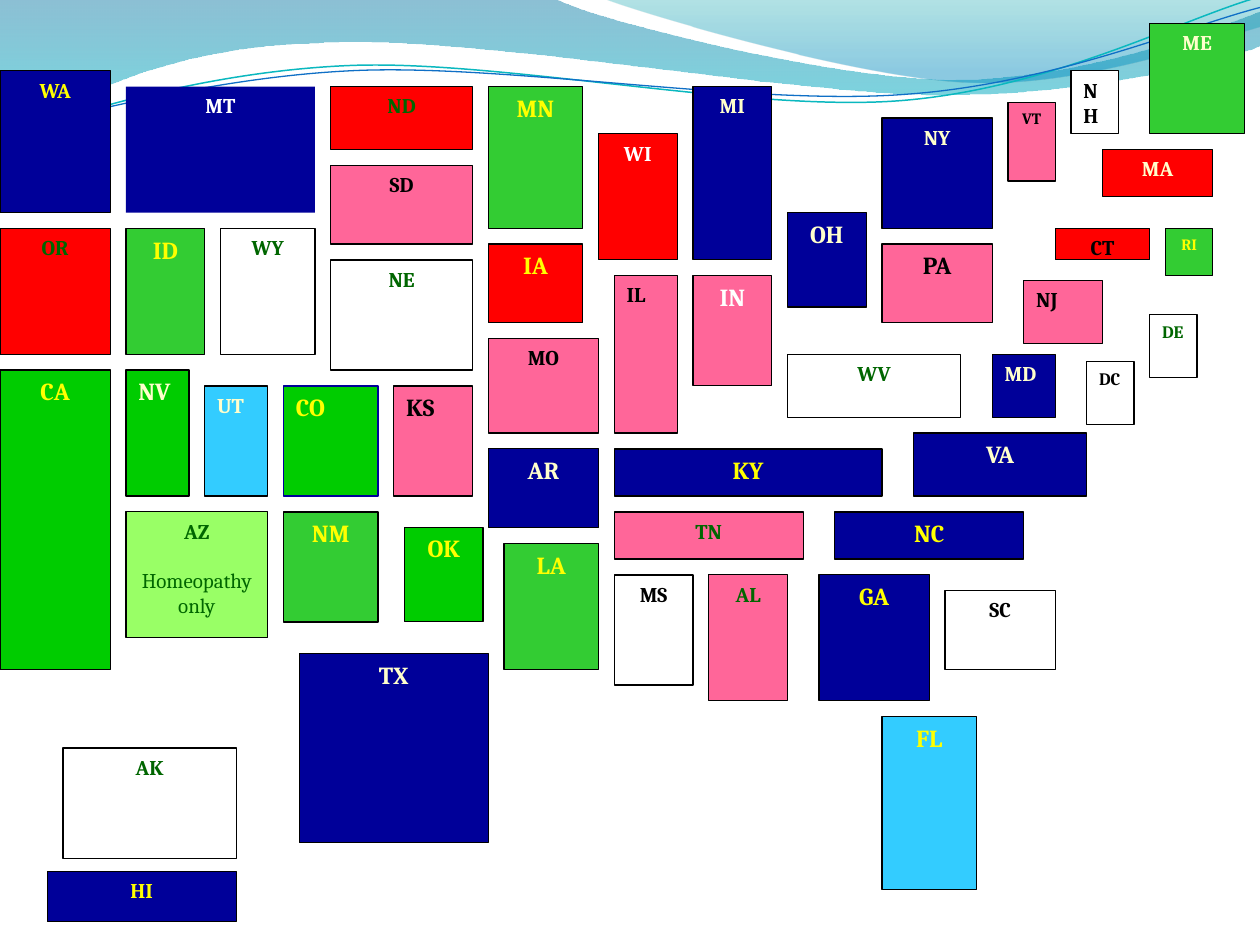
import math
from dataclasses import dataclass, field

import pptx
import pptx.dml.color
import pptx.enum.shapes
import pptx.enum.text
import pptx.oxml
import pptx.oxml.ns
import pptx.util
from lxml import etree

Cm = pptx.util.Cm
Pt = pptx.util.Pt
CM_PER_INCH = 2.54
GRID = CM_PER_INCH / 8  # the map sits on a grid of eighths of an inch


@dataclass
class Theme:
    font: str = "Cambria"
    border: float = 0.75
    sizes: dict = field(default_factory=lambda: {"L": 14, "M": 12, "S": 10, "XS": 9})
    colours: dict = field(default_factory=lambda: {
        "navy": "000099", "green": "00CC00", "leaf": "33CC33", "lime": "99FF66",
        "red": "FF0000", "pink": "FF6699", "sky": "33CCFF", "white": "FFFFFF",
        "black": "000000", "yellow": "FFFF00", "cream": "FFFFCC", "forest": "006600",
        "deep teal": "0074A1", "aqua": "00C6CF", "sea": "00A1A9", "ocean": "008BBF",
        "teal line": "0AB8BF", "blue line": "0F6FC6"})

    def rgb(self, name):
        return pptx.dml.color.RGBColor.from_string(self.colours[name])


theme = Theme()
deck = pptx.Presentation()
deck.slide_width, deck.slide_height = Cm(25.4), Cm(19.05)
slide = deck.slides.add_slide(deck.slide_layouts[6])


def wave(segments, tilt=0, centre=(0, 0), closed=True):
    """Draw lines (one point) and Bezier curves (three points), given in inches."""
    points = [pair for segment in segments for pair in zip(segment[0::2], segment[1::2])]
    # Undo the tilt here, as the shape's own rotation puts it back
    cos, sin = math.cos(math.radians(tilt)), math.sin(math.radians(tilt))
    cx, cy = centre
    outline = [(Cm(CM_PER_INCH * (cx + (x - cx) * cos - (y - cy) * sin)),
                Cm(CM_PER_INCH * (cy + (x - cx) * sin + (y - cy) * cos)))
               for x, y in points]
    builder = slide.shapes.build_freeform(*outline[0])
    builder.add_line_segments(outline[1:], close=False)
    shape = builder.convert_to_shape()
    shape.shadow.inherit = False
    shape.rotation = -tilt % 360

    # Join each run of three points into one curve
    qn = pptx.oxml.ns.qn
    route = next(shape.element.iter(qn("a:path")))
    steps = iter(route.findall(qn("a:lnTo")))
    for segment in segments[1:]:
        step = next(steps)
        if len(segment) == 6:
            curve = etree.Element(qn("a:cubicBezTo"))
            step.addprevious(curve)
            for part in (step, next(steps), next(steps)):
                curve.append(part[0])
                route.remove(part)
    if closed:
        etree.SubElement(route, qn("a:close"))
    return shape


# Header waves: outline, then (position, colour, opacity in percent) per stop
bands = [
    ([(0, 0), (4.4, -0.01), (4.76, 0.17, 6.64, 0.63, 7.58, 0.63),
      (8.53, 0.63, 9.58, 0.26, 10, 0.09), (10.01, 0.36),
      (9.83, 0.44, 8.7, 0.76, 7.46, 0.75), (6.22, 0.75, 3.82, 0.28, 2.57, 0.34),
      (1.29, 0.36, 0.46, 0.83, -0.01, 1.13), (0, 0)],
     [(0, "deep teal", 45), (1, "aqua", 55)]),
    ([(4.79, -0.01), (5.09, 0.11, 6.82, 0.62, 7.69, 0.65),
      (8.56, 0.69, 9.61, 0.32, 10, 0.21), (10, 0), (4.79, -0.01)],
     [(0, "sea", 30), (0.8, "ocean", 45)]),
]
for outline, stops in bands:
    band = wave(outline)
    band.line.fill.background()
    band.fill.gradient()
    band.fill.gradient_angle = 270
    for stop, (position, colour, _) in zip(band.fill.gradient_stops, stops):
        stop.position = position
        stop.color.rgb = theme.rgb(colour)
    colour_tags = list(band.element.iter(pptx.oxml.ns.qn("a:srgbClr")))
    for tag, (_, _, opacity) in zip(colour_tags, stops):
        etree.SubElement(tag, pptx.oxml.ns.qn("a:alpha"), val=str(opacity * 1000))

# Thin wave lines
strands = [
    ([(0, 1.11), (0.48, 0.93, 1.58, 0.57, 2.77, 0.52), (3.95, 0.47, 5.93, 0.89, 7.13, 0.8),
      (8.33, 0.71, 9.38, 0.15, 9.98, -0.02)], (4.99, 0.57), "teal line", 0.85),
    ([(0, 1.04), (0.47, 0.96, 1.64, 0.61, 2.83, 0.56), (4.03, 0.51, 5.97, 0.84, 7.17, 0.75),
      (8.36, 0.67, 9.41, 0.21, 10, 0.06)], (5, 0.59), "blue line", 0.75),
]
for outline, centre, colour, weight in strands:
    strand = wave(outline, tilt=2.7, centre=centre, closed=False)
    strand.fill.background()
    strand.line.color.rgb = theme.rgb(colour)
    strand.line.width = Pt(weight)

# States: left, top, width, height in grid steps, fill, text colour, text size
states = {
    "WA": (0, 4.5, 7, 9, "navy", "yellow", "M"),
    "NV": (8, 23.5, 4, 8, "green", "cream", "L"),
    "NE": (21, 16.5, 9, 7, "white", "forest", "M"),
    "MS": (39, 36.5, 5, 7, "white", "black", "M"),
    "WI": (38, 8.5, 5, 8, "red", "white", "M"),
    "MO": (31, 21.5, 7, 6, "pink", "black", "M"),
    "WY": (14, 14.5, 6, 8, "white", "forest", "M"),
    "IN": (44, 17.5, 5, 7, "pink", "white", "L"),
    "ND": (21, 5.5, 9, 4, "red", "forest", "M"),
    "MN": (31, 5.5, 6, 9, "leaf", "yellow", "L"),
    "MI": (44, 5.5, 5, 11, "navy", "cream", "M"),
    "OR": (0, 14.5, 7, 8, "red", "forest", "M"),
    "CO": (18, 24.5, 6, 7, "green", "yellow", "L"),
    "AR": (31, 28.5, 7, 5, "navy", "cream", "L"),
    "HI": (3, 55.33, 12, 3.2, "navy", "yellow", "M"),
    "SC": (60, 37.5, 7, 5, "white", "black", "M"),
    "TN": (39, 32.5, 12, 3, "pink", "forest", "M"),
    "NY": (56, 7.5, 7, 7, "navy", "cream", "M"),
    "OH": (50, 13.5, 5, 6, "navy", "cream", "L"),
    "PA": (56, 15.5, 7, 5, "pink", "black", "L"),
    "WV": (50, 22.5, 11, 4, "white", "forest", "M"),
    "VT": (64, 6.5, 3, 5, "pink", "black", "XS"),
    "CT": (67, 14.5, 6, 2, "red", "black", "M"),
    "NJ": (65, 17.8, 5, 4, "pink", "black", "M"),
    "ME": (73, 1.5, 6, 7, "leaf", "cream", "M"),
    "MA": (70, 9.5, 7, 3, "red", "cream", "M"),
    "CA": (0, 23.5, 7, 19, "green", "yellow", "L"),
    "LA": (32, 34.5, 6, 8, "leaf", "yellow", "L"),
    "KY": (39, 28.5, 17, 3, "navy", "yellow", "L"),
    "GA": (52, 36.5, 7, 8, "navy", "yellow", "L"),
    "TX": (19, 41.5, 12, 12, "navy", "cream", "L"),
    "KS": (25, 24.5, 5, 7, "pink", "black", "L"),
    "OK": (25.68, 33.47, 5, 6, "green", "yellow", "L"),
    "VA": (58, 27.5, 11, 4, "navy", "cream", "L"),
    "AL": (45, 36.5, 5, 8, "pink", "forest", "M"),
    "NC": (53, 32.5, 12, 3, "navy", "yellow", "L"),
    "AK": (4, 47.5, 11, 7, "white", "forest", "M"),
    "FL": (56, 45.5, 6, 11, "sky", "yellow", "L"),
    "DE": (73, 19.97, 3, 4, "white", "forest", "S"),
    "MD": (63, 22.5, 4, 4, "navy", "cream", "M"),
    "IL": (39, 17.5, 4, 10, "pink", "black", "M"),
    "MT": (8, 5.5, 12, 8, "navy", "white", "M"),
    "ID": (8, 14.5, 5, 8, "leaf", "yellow", "L"),
    "SD": (21, 10.5, 9, 5, "pink", "black", "M"),
    "IA": (31, 15.5, 6, 5, "red", "yellow", "L"),
    "UT": (13, 24.5, 4, 7, "sky", "cream", "M"),
    "NM": (18, 32.5, 6, 7, "leaf", "yellow", "L"),
    "NH": (68, 4.5, 3, 4, "white", "black", "M"),
    "RI": (74, 14.5, 3, 3, "leaf", "yellow", "XS"),
    "AZ": (8, 32.5, 9, 8, "lime", "forest", "M"),
    "DC": (69, 22.95, 3, 4, "white", "black", "S"),
}
left_aligned = {"NV", "CO", "NJ", "KS", "DE", "MD", "IL", "UT", "NH", "DC"}
remarks = {"AZ": "Homeopathy only"}
borders = {"CO": "navy", "MT": None}

for code, (*box, fill, ink, size) in states.items():
    state = slide.shapes.add_shape(pptx.enum.shapes.MSO_SHAPE.RECTANGLE,
                                   *(Cm(GRID * steps) for steps in box))
    state.shadow.inherit = False
    state.fill.solid()
    state.fill.fore_color.rgb = theme.rgb(fill)
    border = borders.get(code, "black")
    if border:
        state.line.color.rgb = theme.rgb(border)
        state.line.width = Pt(theme.border)
    else:
        state.line.fill.background()

    label = state.text_frame
    label.word_wrap = True
    label.vertical_anchor = pptx.enum.text.MSO_ANCHOR.TOP
    lines = [code] + ([remarks[code]] if code in remarks else [])
    for number, wording in enumerate(lines):
        line = label.add_paragraph() if number else label.paragraphs[0]
        line.alignment = (pptx.enum.text.PP_ALIGN.LEFT if code in left_aligned
                          else pptx.enum.text.PP_ALIGN.CENTER)
        if number:
            line.space_before = Pt(14)
        run = line.add_run()
        run.text = wording
        run.font.name = theme.font
        run.font.size = Pt(theme.sizes[size])
        run.font.bold = number == 0
        run.font.color.rgb = theme.rgb(ink)

deck.save("out.pptx")
